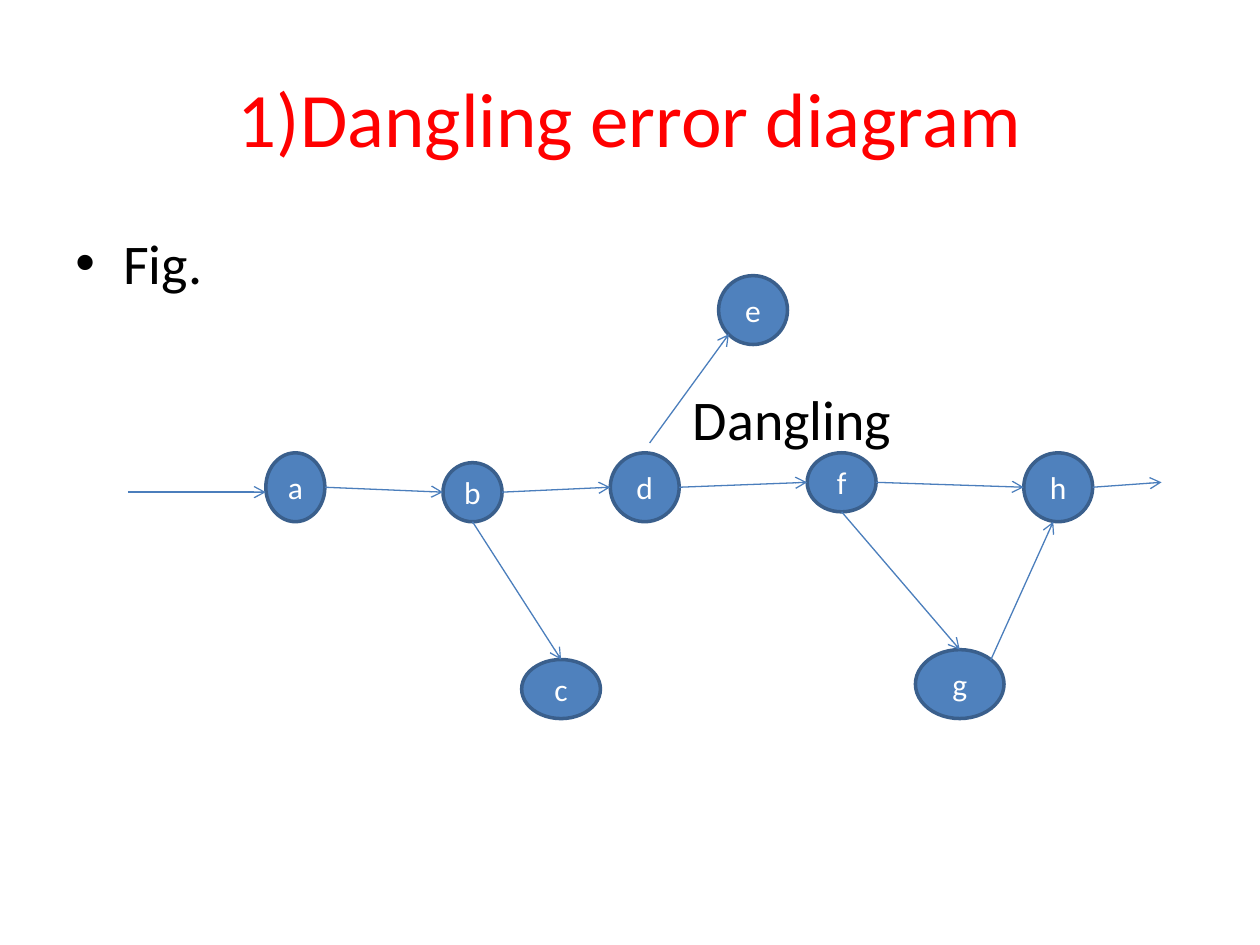
from typing import NamedTuple

from lxml import etree
from pptx import Presentation
from pptx.dml.color import RGBColor
from pptx.enum.shapes import MSO_CONNECTOR, MSO_SHAPE
from pptx.enum.text import MSO_ANCHOR, PP_ALIGN
from pptx.oxml.ns import qn
from pptx.util import Inches, Pt

ELLIPSE = MSO_SHAPE.OVAL
STRAIGHT = MSO_CONNECTOR.STRAIGHT
TOP, MIDDLE = MSO_ANCHOR.TOP, MSO_ANCHOR.MIDDLE
LEFT, CENTER = PP_ALIGN.LEFT, PP_ALIGN.CENTER

FONT = "Calibri"
COLORS = {
    "title": "FF0000",
    "body": "000000",
    "node": "4F81BD",
    "node_edge": "3A5F8C",
    "node_text": "FFFFFF",
    "arrow": "4B7EBC",
}

# The slide is a grid of 128 columns by 96 square rows
WIDTH, HEIGHT = Inches(10), Inches(7.5)
UNIT = WIDTH / 128

# Points on a node's rim, as shares of its width and height
RIM = {
    "top": (0.5, 0), "bottom": (0.5, 1), "left": (0, 0.5), "right": (1, 0.5),
    "bottom_left": (0.15, 0.85), "top_right": (0.85, 0.15),
}


class Point(NamedTuple):
    col: float
    row: float


class Node(NamedTuple):
    col: float
    row: float
    cols: float
    rows: float

    def rim(self, side: str) -> Point:
        across, down = RIM[side]
        return Point(self.col + across * self.cols, self.row + down * self.rows)


NODES = {
    "a": Node(27, 46, 6, 7),
    "b": Node(45, 47, 6, 6),
    "d": Node(62, 46, 7, 7),
    "f": Node(82, 46, 7, 6),
    "h": Node(104, 46, 7, 7),
    "e": Node(73, 28, 7, 7),
    "c": Node(53, 67, 8, 6),
    "g": Node(93, 66, 9, 7),
}
MAIN_PATH = "abdfh"


def grid(units: float) -> int:
    return round(units * UNIT)


def color(name: str) -> RGBColor:
    return RGBColor.from_string(COLORS[name])


def add_run(paragraph, text: str, size: float, color_name: str) -> None:
    run = paragraph.add_run()
    run.text = text
    run.font.name = FONT
    run.font.size = Pt(size)
    run.font.color.rgb = color(color_name)


def add_text_frame(slide, top: float, height: float, anchor):
    """Add a text box that spans 90% of the width; top and height are shares."""
    box = slide.shapes.add_textbox(
        round(0.05 * WIDTH), round(top * HEIGHT), round(0.9 * WIDTH), round(height * HEIGHT)
    )
    frame = box.text_frame
    frame.word_wrap = True
    frame.vertical_anchor = anchor
    return frame


def set_indent(paragraph, margin: float, first_line: float = 0, bullet: str = "") -> None:
    properties = paragraph._p.get_or_add_pPr()
    properties.set("marL", str(Inches(margin)))
    properties.set("indent", str(Inches(first_line)))
    if bullet:
        etree.SubElement(properties, qn("a:buFont"), typeface="Arial")
        etree.SubElement(properties, qn("a:buChar"), char=bullet)


def add_node(slide, label: str, node: Node) -> None:
    shape = slide.shapes.add_shape(ELLIPSE, *(grid(length) for length in node))
    shape.shadow.inherit = False
    shape.fill.solid()
    shape.fill.fore_color.rgb = color("node")
    shape.line.color.rgb = color("node_edge")
    shape.line.width = Pt(2)
    frame = shape.text_frame
    frame.vertical_anchor = MIDDLE
    frame.paragraphs[0].alignment = CENTER
    add_run(frame.paragraphs[0], label, 18, "node_text")


def add_arrow(slide, start: Point, end: Point) -> None:
    arrow = slide.shapes.add_connector(STRAIGHT, *(grid(length) for length in start + end))
    arrow.line.color.rgb = color("arrow")
    arrow.line.width = Pt(0.75)
    etree.SubElement(arrow.line._get_or_add_ln(), qn("a:tailEnd"), type="arrow")
    etree.SubElement(arrow._element.spPr, qn("a:effectLst"))


def main() -> None:
    deck = Presentation()
    deck.slide_width, deck.slide_height = WIDTH, HEIGHT
    slide = deck.slides.add_slide(deck.slide_layouts[6])

    # Title
    title = add_text_frame(slide, 0.04, 0.167, MIDDLE).paragraphs[0]
    title.alignment = CENTER
    add_run(title, "1)Dangling error diagram", 44, "title")

    # Figure caption, and the label beside the dangling branch
    body = add_text_frame(slide, 0.235, 0.66, TOP)
    caption = body.paragraphs[0]
    caption.alignment = LEFT
    set_indent(caption, 0.38, -0.38, "•")
    add_run(caption, "Fig.", 32, "body")
    branch_label = body.add_paragraph()
    branch_label.alignment = LEFT
    branch_label.space_before = Pt(51)
    set_indent(branch_label, 4.9)
    add_run(branch_label, "Dangling", 32, "body")

    # Nodes
    for label, node in NODES.items():
        add_node(slide, label, node)

    # Arrows along the main path, with its entry and exit
    add_arrow(slide, Point(13, 50), Point(27, 50))
    for source, target in zip(MAIN_PATH, MAIN_PATH[1:]):
        add_arrow(slide, NODES[source].rim("right"), NODES[target].rim("left"))
    add_arrow(slide, NODES["h"].rim("right"), Point(118, 49))

    # Arrows of the branches
    add_arrow(slide, Point(66, 45), NODES["e"].rim("bottom_left"))
    for source, target in ("bc", "fg"):
        add_arrow(slide, NODES[source].rim("bottom"), NODES[target].rim("top"))
    add_arrow(slide, NODES["g"].rim("top_right"), Point(107, 53))

    deck.save("out.pptx")


if __name__ == "__main__":
    main()
